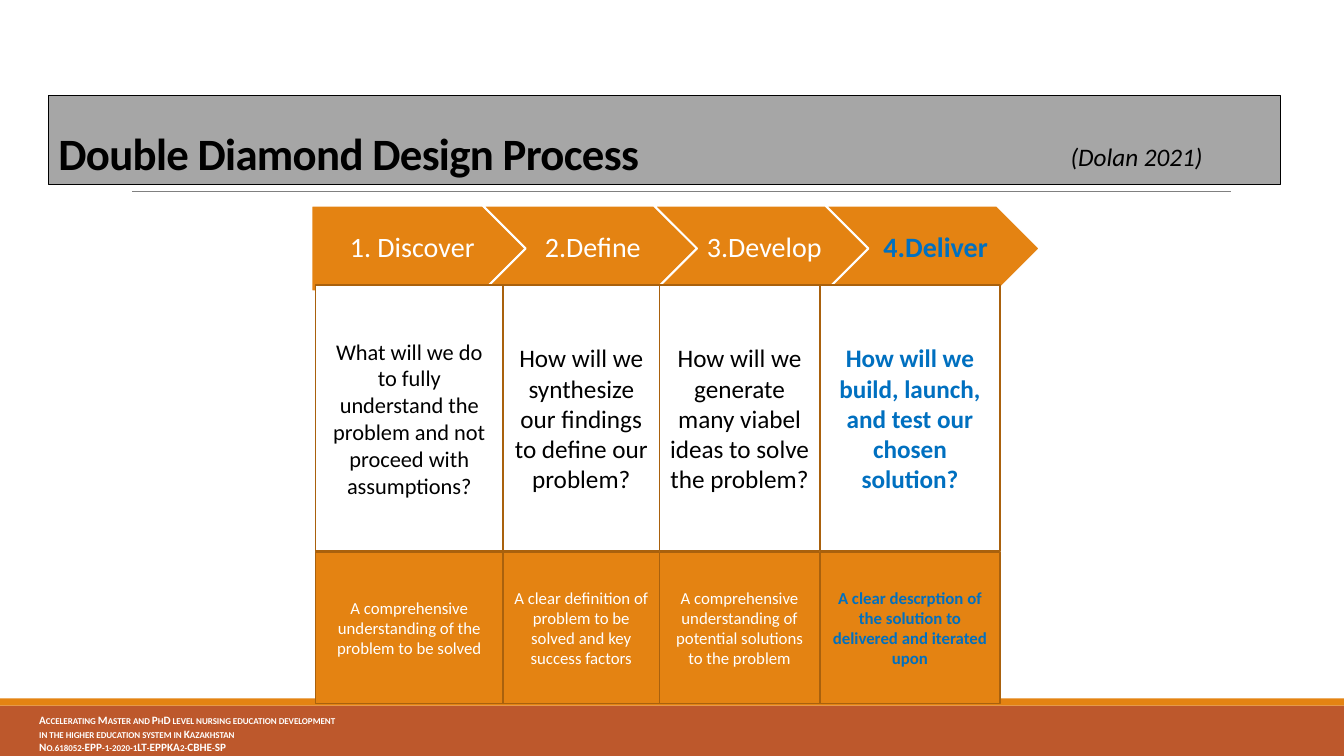
from lxml.etree import SubElement
from pptx import Presentation
from pptx.dml.color import RGBColor
from pptx.enum.shapes import MSO_CONNECTOR, MSO_SHAPE
from pptx.enum.text import MSO_ANCHOR, PP_ALIGN
from pptx.oxml.ns import qn
from pptx.util import Inches, Pt

ORANGE = RGBColor(0xE4, 0x83, 0x12)
BROWN = RGBColor(0xA9, 0x61, 0x0D)
RUST = RGBColor(0xBD, 0x58, 0x2C)
BLUE = RGBColor(0x00, 0x70, 0xC0)
GRAY = RGBColor(0xA6, 0xA6, 0xA6)
RULE_GRAY = RGBColor(0x80, 0x80, 0x80)
WHITE = RGBColor(0xFF, 0xFF, 0xFF)
BLACK = RGBColor(0x00, 0x00, 0x00)

STAGES = [
    ("1. Discover",
     "What will we do to fully understand the problem and not proceed with assumptions?",
     "A comprehensive understanding of the problem to be solved"),
    ("2.Define",
     "How will we synthesize our findings to define our problem?",
     "A clear definition of problem to be solved and key success factors"),
    ("3.Develop",
     "How will we generate many viabel ideas to solve the problem?",
     "A comprehensive understanding of potential solutions to the problem"),
    ("4.Deliver",
     "How will we build, launch, and test our chosen solution?",
     "A clear descrption of the solution to delivered and iterated upon"),
]
COLUMN_EDGES = [3.13, 4.99, 6.54, 8.13, 9.92]
QUESTION_SIZES = [16, 18, 18, 18]
FOOTER = [
    "Accelerating Master and PhD level nursing education development",
    "in the higher education system in Kazakhstan",
    "No.618052-EPP-1-2020-1LT-EPPKA2-CBHE-SP",
]


class SlideBuilder:
    font = "Calibri"

    def __init__(self, slide):
        self.slide = slide

    def shape(self, kind, box, fill, line=None, width=1.25):
        s = self.slide.shapes.add_shape(kind, *map(Inches, box))
        s.shadow.inherit = False
        s.fill.solid()
        s.fill.fore_color.rgb = fill
        if line is None:
            s.line.fill.background()
        else:
            s.line.color.rgb = line
            s.line.width = Pt(width)
        return s

    def textbox(self, box):
        return self.slide.shapes.add_textbox(*map(Inches, box))

    def rule(self, x1, x2, y):
        c = self.slide.shapes.add_connector(
            MSO_CONNECTOR.STRAIGHT, *map(Inches, (x1, y, x2, y)))
        c.line.color.rgb = RULE_GRAY
        c.line.width = Pt(0.5)
        SubElement(c._element.spPr, qn("a:effectLst"))

    def add_text(self, s, lines, size, color, align=PP_ALIGN.CENTER,
                 anchor=MSO_ANCHOR.MIDDLE, insets=None, spacing=None,
                 run_xml=None, **font):
        """Fill a shape with paragraphs; run_xml holds raw run attributes."""
        tf = s.text_frame
        tf.word_wrap = True
        tf.vertical_anchor = anchor
        for side, value in (insets or {}).items():
            setattr(tf, f"margin_{side}", Inches(value))
        style = {"name": self.font, "size": Pt(size), **font}
        for i, line in enumerate(lines):
            p = tf.add_paragraph() if i else tf.paragraphs[0]
            p.alignment = align
            if spacing:
                p.line_spacing = spacing
            r = p.add_run()
            r.text = line
            for name, value in style.items():
                setattr(r.font, name, value)
            r.font.color.rgb = color
            for name, value in (run_xml or {}).items():
                r._r.get_or_add_rPr().set(name, value)


def add_frame(b):
    b.shape(MSO_SHAPE.RECTANGLE, (0, 7, 13.33, 0.5), RUST)
    b.shape(MSO_SHAPE.RECTANGLE, (0, 6.93, 13.33, 0.07), ORANGE)
    b.rule(1.31, 12.21, 1.9)
    b.add_text(b.textbox((0.29, 7.03, 4.59, 0.47)), FOOTER, 8, WHITE,
               PP_ALIGN.LEFT, MSO_ANCHOR.TOP, bold=True, run_xml={"cap": "small"})
    title = b.shape(MSO_SHAPE.RECTANGLE, (0.48, 0.95, 12.22, 0.88), GRAY, BLACK, 1)
    b.add_text(title, ["Double Diamond Design Process"], 32, BLACK, PP_ALIGN.LEFT,
               MSO_ANCHOR.BOTTOM, spacing=0.85, bold=True, run_xml={"spc": "-50"})


def add_arrows(b):
    for i, (name, _, _) in enumerate(STAGES):
        is_last = i == len(STAGES) - 1
        kind = MSO_SHAPE.CHEVRON if i else MSO_SHAPE.PENTAGON
        arrow = b.shape(kind, (3.09 + 1.7 * i, 2.04, 2.12, 0.85), ORANGE, WHITE)
        insets = {"left": 0.09 if i else 0.12, "right": 0.03,
                  "top": 0.06, "bottom": 0.06}
        b.add_text(arrow, [name], 20, BLUE if is_last else WHITE,
                   insets=insets, spacing=0.9, bold=is_last)


def add_columns(b):
    for i, (_, question, result) in enumerate(STAGES):
        is_last = i == len(STAGES) - 1
        left, right = COLUMN_EDGES[i:i + 2]
        for top, height, text, size, fill, ink in (
                (5.48, 1.5, result, 12, ORANGE, WHITE),
                (2.83, 2.64, question, QUESTION_SIZES[i], WHITE, BLACK)):
            cell = b.shape(MSO_SHAPE.RECTANGLE, (left, top, right - left, height),
                           fill, BROWN)
            b.add_text(cell, [text], size, BLUE if is_last else ink, bold=is_last)


def main():
    prs = Presentation()
    prs.slide_width, prs.slide_height = Inches(13.33), Inches(7.5)
    b = SlideBuilder(prs.slides.add_slide(prs.slide_layouts[6]))
    add_frame(b)
    add_arrows(b)
    add_columns(b)
    b.add_text(b.textbox((10.52, 1.35, 2, 0.4)), ["(Dolan 2021)"], 18, BLACK,
               PP_ALIGN.LEFT, MSO_ANCHOR.TOP, italic=True)
    prs.save("out.pptx")


if __name__ == "__main__":
    main()
